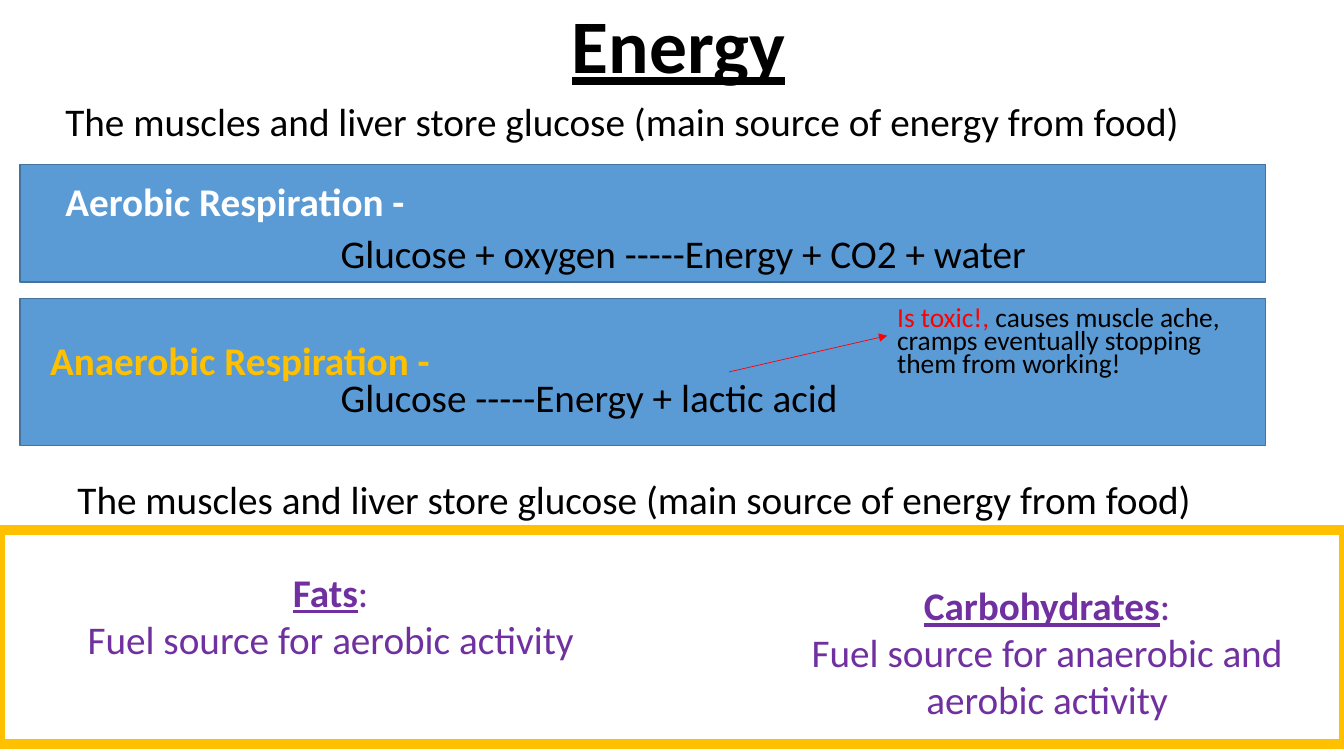
from pptx import Presentation
from pptx import util as u
from pptx.dml.color import RGBColor
from pptx.enum import shapes, text
from pptx.oxml.ns import qn
from lxml import etree

PX = 9144  # 100 px to the inch
BLACK, WHITE, BLUE, NAVY = "000000", "FFFFFF", "5B9BD5", "43739E"
GOLD, RED, PURPLE = "FFC000", "FF0000", "7030A0"
STORES = "The muscles and liver store glucose (main source of energy from food)"


def px(*lengths):
    return [u.Emu(n * PX) for n in lengths]


def paint(fmt, color):
    """Give a font, a line or a fill a solid colour."""
    if hasattr(fmt, "solid"):
        fmt.solid()
        fmt = fmt.fore_color
    else:
        fmt = fmt.color
    fmt.rgb = RGBColor.from_string(color)


def add_run(p, words, color, size=28, **style):
    r = p.add_run()
    r.text = words
    for name, value in dict(name="Calibri", size=u.Pt(size), **style).items():
        setattr(r.font, name, value)
    paint(r.font, color)


def text_box(s, box):
    tf = s.shapes.add_textbox(*px(*box)).text_frame
    tf.word_wrap = True
    return tf


def add_statement(s, box, runs, spacing=0.9):
    """Place one paragraph; each run is (words, colour, style)."""
    p = text_box(s, box).paragraphs[0]
    for name, value in dict(line_spacing=spacing, space_before=u.Pt(10)).items():
        setattr(p, name, value)
    for words, color, style in runs:
        add_run(p, words, color, **style)


def add_rect(s, box, line, width, fill=None):
    sp = s.shapes.add_shape(shapes.MSO_SHAPE.RECTANGLE, *px(*box))
    sp.shadow.inherit = False
    if fill:
        paint(sp.fill, fill)
    else:
        sp.fill.background()
    paint(sp.line, line)
    sp.line.width = u.Pt(width)


def add_title(s, box, words):
    sp = s.shapes.title
    sp.left, sp.top, sp.width, sp.height = px(*box)
    tf = sp.text_frame
    tf.vertical_anchor = text.MSO_ANCHOR.MIDDLE
    p = tf.paragraphs[0]
    p.alignment = text.PP_ALIGN.CENTER
    p.line_spacing = 0.9
    add_run(p, words, BLACK, 54, bold=True, underline=True)


def add_respiration(s, box, heading, heading_at, color, equation, equation_y):
    """Draw a panel with a heading and an equation inside it."""
    x, y, _, _ = box
    dx, dy = heading_at
    add_rect(s, box, NAVY, 1, BLUE)
    add_statement(s, (x + dx, y + dy, 767, 54), [(heading, color, dict(bold=True))])
    add_statement(s, (x + 308, y + equation_y, 767, 54), [(equation, BLACK, {})])


def add_toxic_note(s, box):
    """Place the warning and the arrow that leads to it from the equation."""
    x, y, _, _ = box
    ends = px(x - 157, y + 67, x, y + 31)
    arrow = s.shapes.add_connector(shapes.MSO_CONNECTOR.STRAIGHT, *ends)
    paint(arrow.line, RED)
    arrow.line.width = u.Pt(0.5)
    etree.SubElement(arrow.line._get_or_add_ln(), qn("a:tailEnd"), type="triangle")
    etree.SubElement(arrow._element.spPr, qn("a:effectLst"))
    add_statement(s, box, [
        ("Is toxic!, ", RED, dict(size=19.6)),
        ("causes muscle ache, cramps eventually stopping them from working!",
         BLACK, dict(size=19.6)),
    ], 0.7)


def add_fuel(s, box, name, use):
    tf = text_box(s, box)
    heading, body = tf.paragraphs[0], tf.add_paragraph()
    heading.alignment = body.alignment = text.PP_ALIGN.CENTER
    add_run(heading, name, PURPLE, bold=True, underline=True)
    add_run(heading, ":", PURPLE)
    add_run(body, use, PURPLE)


def add_fuels(s, box):
    """Frame the two fuel sources."""
    x, y, _, _ = box
    add_fuel(s, (x + 65, y + 33, 526, 104), "Fats", "Fuel source for aerobic activity")
    add_fuel(s, (x + 772, y + 46, 533, 151), "Carbohydrates",
             "Fuel source for anaerobic and aerobic activity")
    add_rect(s, box, GOLD, 6.75)


def main():
    prs = Presentation()
    prs.slide_width, prs.slide_height = px(1333, 750)
    s = prs.slides.add_slide(prs.slide_layouts[5])
    add_title(s, (98, 0, 1150, 97), "Energy")
    add_statement(s, (55, 97, 1250, 54), [(STORES, BLACK, {})])
    add_respiration(s, (20, 163, 1235, 117), "Aerobic Respiration -", (35, 13), WHITE,
                    "Glucose + oxygen -----Energy + CO2 + water", 65)
    add_respiration(s, (20, 296, 1235, 146), "Anaerobic Respiration -", (20, 38), GOLD,
                    "Glucose -----Energy + lactic acid", 75)
    add_toxic_note(s, (880, 302, 375, 101))
    add_statement(s, (67, 472, 1250, 54), [(STORES, BLACK, {})])
    add_fuels(s, (0, 526, 1333, 212))
    prs.save("out.pptx")


if __name__ == "__main__":
    main()
